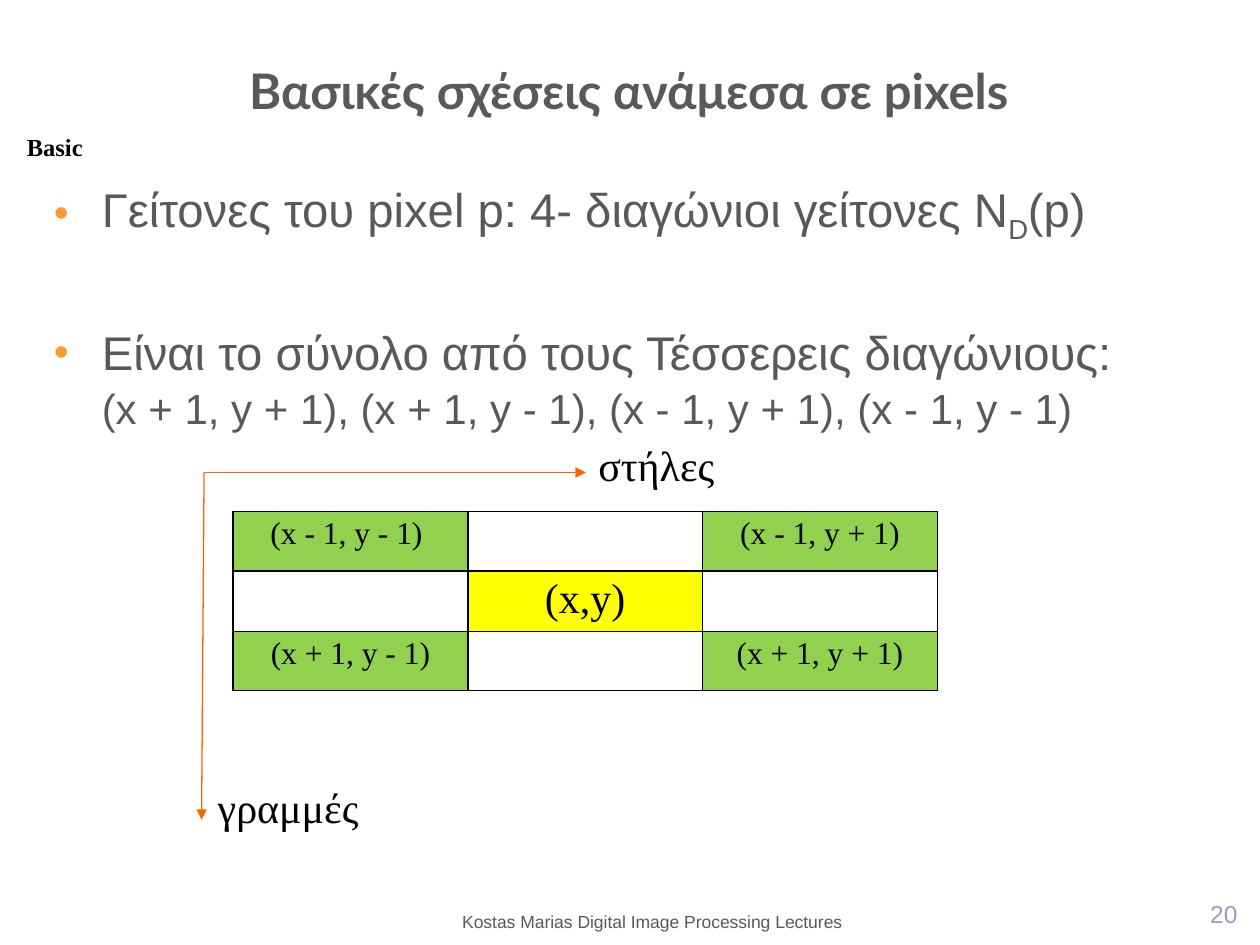
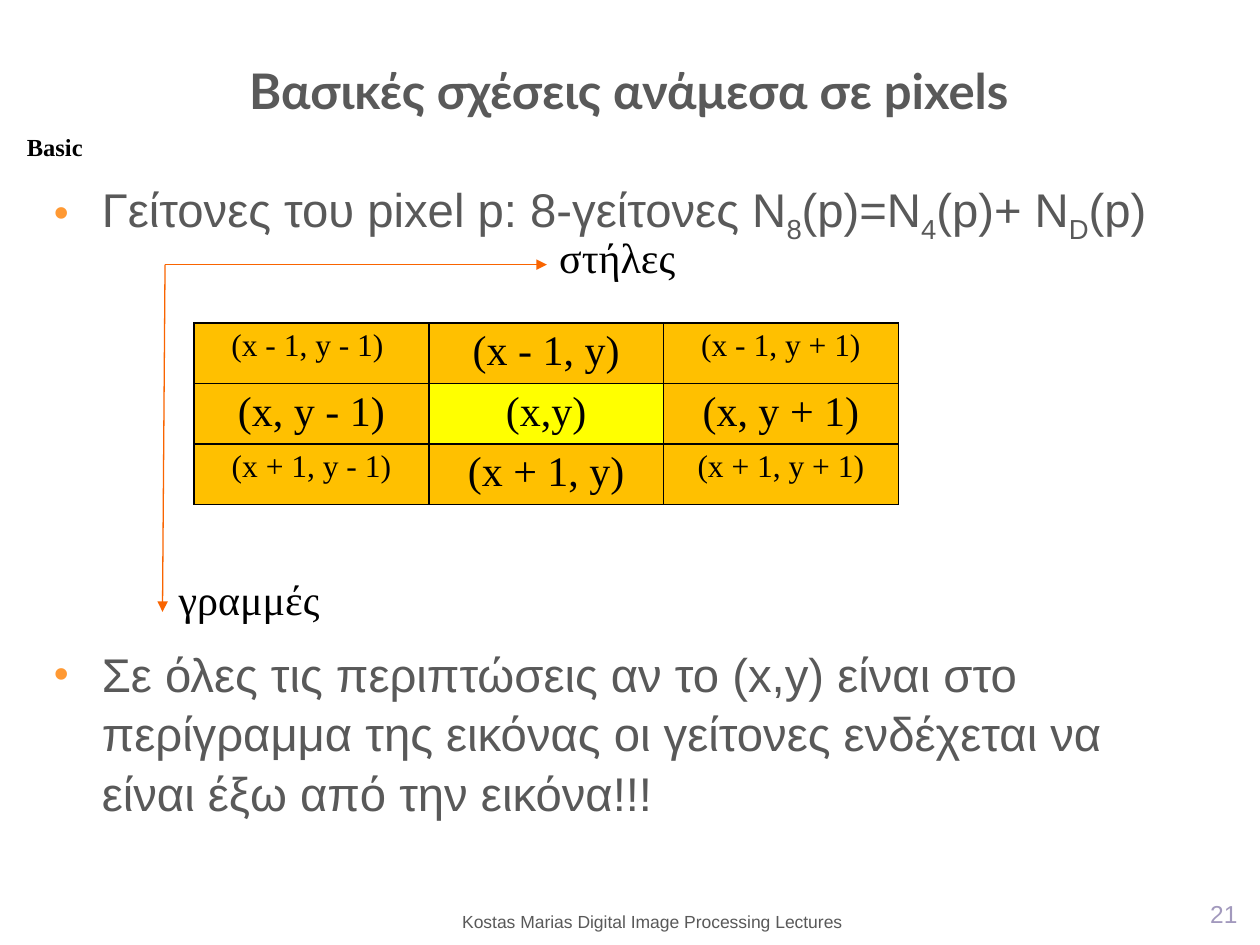
from dataclasses import dataclass

from lxml import etree
from pptx import Presentation
from pptx.dml.color import RGBColor
from pptx.enum.shapes import MSO_CONNECTOR
from pptx.enum.text import MSO_ANCHOR, PP_ALIGN
from pptx.oxml.ns import qn
from pptx.util import Inches, Pt

LEFT, CENTER, RIGHT = PP_ALIGN.LEFT, PP_ALIGN.CENTER, PP_ALIGN.RIGHT
TOP, BOTTOM = MSO_ANCHOR.TOP, MSO_ANCHOR.BOTTOM
STRAIGHT = MSO_CONNECTOR.STRAIGHT
WIDTH, HEIGHT = Inches(10), Inches(7.5)


@dataclass(frozen=True)
class Theme:
    # Colours
    gray: str = "595959"
    black: str = "000000"
    white: str = "FFFFFF"
    lilac: str = "A299BD"
    bullet: str = "FF9933"
    arrow: str = "F96400"
    green: str = "92D050"
    amber: str = "FFC000"
    yellow: str = "FFFF00"
    # Fonts
    sans: str = "Arial"
    serif: str = "Times New Roman"
    heading: str = "Lato"
    # Type sizes
    title: int = 28
    body: int = 27
    label: int = 24
    corner: int = 18
    small: int = 14
    footer: int = 10


T = Theme()

# Content
TITLE = "Βασικές σχέσεις ανάμεσα σε pixels"
FOOTER = "Kostas Marias Digital Image Processing Lectures"
CORNERS = {(0, 0): "(x - 1, y - 1) ", (0, 2): "(x - 1, y + 1)",
           (2, 0): "(x + 1, y - 1)", (2, 2): "(x + 1, y + 1)"}
SIDES = {(0, 1): "(x - 1, y)", (1, 0): "(x, y - 1)",
         (1, 2): "(x, y + 1)", (2, 1): "(x + 1, y)"}
PIXEL = {(1, 1): "(x,y)"}


def across(pct):
    """Percent of the slide's width."""
    return int(WIDTH * pct / 100)


def down(pct):
    """Percent of the slide's height."""
    return int(HEIGHT * pct / 100)


def sub(parent, tag, **attrs):
    return etree.SubElement(parent, qn(tag), attrs)


def add_run(p, text, size, font=T.sans, color=T.gray, bold=False, base=0):
    r = p.add_run()
    r.text = text
    r.font.size, r.font.name, r.font.bold = Pt(size), font, bold
    r.font.color.rgb = RGBColor.from_string(color)
    if base:
        r.font._element.set("baseline", str(base * 1000))


def add_box(slide, left, top, width, height, anchor=TOP):
    sp = slide.shapes.add_textbox(across(left), down(top), across(width), down(height))
    tf = sp.text_frame
    tf.word_wrap = True
    tf.vertical_anchor = anchor
    return tf


def add_label(slide, area, text, size, align=LEFT, anchor=TOP, **style):
    p = add_box(slide, *area, anchor=anchor).paragraphs[0]
    p.alignment = align
    add_run(p, text, size, **style)


def add_bullet(p, lines, space_before=0):
    """Each line is a list of (text, size, baseline shift)."""
    pPr = p._p.get_or_add_pPr()
    pPr.set("marL", str(Inches(0.38)))
    pPr.set("indent", str(-Inches(0.38)))
    sub(sub(pPr, "a:buClr"), "a:srgbClr", val=T.bullet)
    sub(pPr, "a:buSzPct", val="90000")
    sub(pPr, "a:buFont", typeface=T.sans)
    sub(pPr, "a:buChar", char="•")
    p.line_spacing = 1.05
    if space_before:
        p.space_before = Pt(space_before)
    for i, line in enumerate(lines):
        if i:
            p.add_line_break()
        for text, size, base in line:
            add_run(p, text, size, base=base)


def formula(*parts):
    """Alternate normal text and subscripts."""
    return [(text, T.body, -25 if i % 2 else 0) for i, text in enumerate(parts)]


def add_body(slide, first, second, gap):
    tf = add_box(slide, 3.3, 18.1, 93.3, 76.6)
    add_bullet(tf.paragraphs[0], [first])
    add_bullet(tf.add_paragraph(), second, gap)


def add_arrow(slide, x1, y1, x2, y2):
    line = slide.shapes.add_connector(STRAIGHT, across(x1), down(y1), across(x2), down(y2))
    line.line.color.rgb = RGBColor.from_string(T.arrow)
    line.line.width = Pt(0.75)
    sub(line.line._get_or_add_ln(), "a:tailEnd", type="triangle")
    sub(line._element.spPr, "a:effectLst")


def add_axes(slide, x, y):
    add_arrow(slide, x, y, x - 0.2, y + 36.75)
    add_arrow(slide, x, y, x + 30.3, y)
    for text, dx, dy in (("στήλες", 30.3, -4.2), ("γραμμές", 0.1, 32)):
        add_label(slide, (x + dx, y + dy, 21.3, 6.67), text, T.label,
                  font=T.serif, color=T.black)


def style_cell(cell, text, size, fill):
    cell.fill.solid()
    cell.fill.fore_color.rgb = RGBColor.from_string(fill)
    cell.margin_top = cell.margin_bottom = Inches(0.04)
    p = cell.text_frame.paragraphs[0]
    p.alignment = CENTER
    if text:
        add_run(p, text, size, T.serif, T.black)
    tcPr = cell._tc.get_or_add_tcPr()
    for i, side in enumerate(("a:lnL", "a:lnR", "a:lnT", "a:lnB")):
        ln = etree.Element(qn(side), w=str(Pt(1)))
        sub(sub(ln, "a:solidFill"), "a:srgbClr", val=T.black)
        tcPr.insert(i, ln)


def add_neighbours(slide, x, y, texts, fill):
    """3 x 3 grid of pixels around (x,y); cells without text stay white."""
    frame = slide.shapes.add_table(3, 3, across(x), down(y), across(55.9), down(18.84))
    table = frame.table
    table.first_row = table.horz_banding = False
    for row in range(3):
        for col in range(3):
            at = (row, col)
            text = texts.get(at, "")
            size = T.corner if at in CORNERS else T.label
            color = T.yellow if at in PIXEL else fill if text else T.white
            style_cell(table.cell(row, col), text, size, color)


def add_slide(prs, number):
    """Blank slide with the shared title, tag, footer and number."""
    slide = prs.slides.add_slide(prs.slide_layouts[6])
    add_label(slide, (84.5, 94.8, 14.7, 4.13), str(number), T.small,
              RIGHT, BOTTOM, color=T.lilac)
    add_label(slide, (5.5, 95.73, 92.5, 3.6), FOOTER, T.footer, CENTER)
    add_label(slide, (1.7, 3.33, 96.4, 10), TITLE, T.title,
              CENTER, BOTTOM, font=T.heading, bold=True)
    add_label(slide, (0, 11.6, 8.7, 6.13), "Basic", T.small,
              CENTER, BOTTOM, font=T.serif, color=T.black, bold=True)
    return slide


def main():
    prs = Presentation()
    prs.slide_width, prs.slide_height = WIDTH, HEIGHT

    # Diagonal neighbours
    slide = add_slide(prs, 20)
    add_body(slide,
             formula("Γείτονες του pixel p: 4- διαγώνιοι γείτονες Ν", "D", "(p)"),
             [formula("Είναι το σύνολο από τους Τέσσερεις διαγώνιους: "),
              [("(x + 1, y + 1), (x + 1, y - 1), (x - 1, y + 1), (x - 1, y - 1)",
                T.label, 0)]],
             gap=43)
    add_neighbours(slide, 18.5, 54.13, CORNERS | PIXEL, T.green)
    add_axes(slide, 16.2, 50)

    # All eight neighbours
    slide = add_slide(prs, 21)
    add_body(slide,
             formula("Γείτονες του pixel p: 8-γείτονες N", "8", "(p)=N", "4",
                     "(p)+ Ν", "D", "(p)"),
             [formula("Σε όλες τις περιπτώσεις αν το (x,y) είναι στο περίγραμμα της "
                      "εικόνας οι γείτονες ενδέχεται να είναι έξω από την εικόνα!!!")],
             gap=227)
    add_neighbours(slide, 15.4, 34.2, CORNERS | SIDES | PIXEL, T.amber)
    add_axes(slide, 13.1, 28)

    prs.save("out.pptx")


if __name__ == "__main__":
    main()
